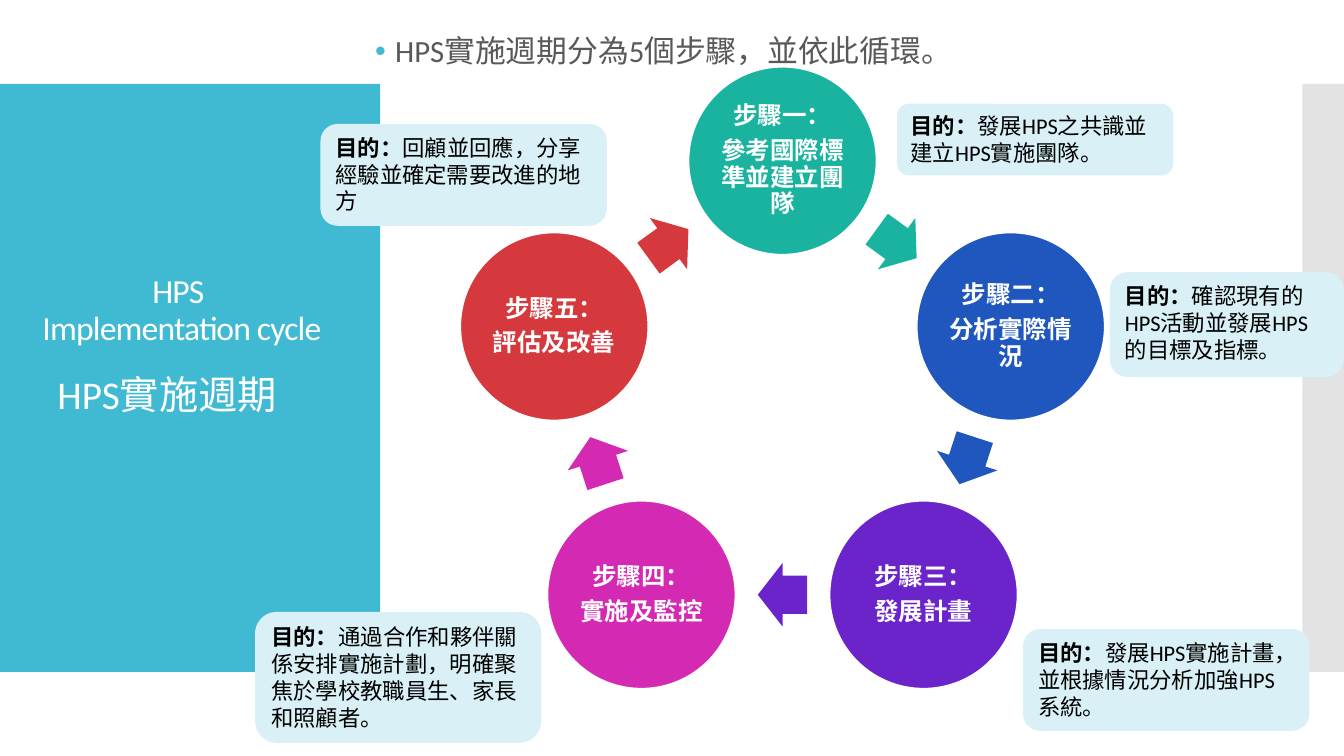
from math import cos, radians, sin

from lxml.etree import SubElement
from pptx import Presentation
from pptx.dml.color import RGBColor
from pptx.enum.shapes import MSO_SHAPE as Shape
from pptx.enum.text import MSO_ANCHOR as Anchor, MSO_AUTO_SIZE as AutoSize, PP_ALIGN as Align
from pptx.oxml.ns import qn
from pptx.util import Inches, Pt

# Content; places are left, top, width, height in percent of the slide
TITLE = ("HPS\v Implementation cycle", (1.2, 32.4, 24.15, 17.47))
CHINESE_TITLE = ("HPS實施週期", (3.53, 48.27, 19.43, 7.6))
INTRO = ("HPS實施週期分為5個步驟，並依此循環。", (27.15, 1.47, 43.2, 10.93))
SIDE_PANELS = [
    ("40BAD2", 100, (0, 11.11, 28.28, 77.78)),
    ("C8C8C8", 50, (96.9, 11.11, 3.1, 77.78)),
]
PURPOSE = "目的："
STEPS = [  # heading, task, colour, purpose, place of the purpose
    ("步驟一：", "參考國際標準並建立團隊", "1AB39F",
     "發展HPS之共識並建立HPS實施團隊。", (66.75, 13.73, 20.55, 9.47)),
    ("步驟二：", "分析實際情況", "1F57BF",
     "確認現有的HPS活動並發展HPS的目標及指標。", (82.58, 36, 17.4, 13.87)),
    ("步驟三：", "發展計畫", "6A24CA",
     "發展HPS實施計畫，並根據情況分析加強HPS系統。", (76.13, 83.2, 21.3, 13.47)),
    ("步驟四：", "實施及監控", "D429B3",
     "通過合作和夥伴關係安排實施計劃，明確聚焦於學校教職員生、家長和照顧者。",
     (18.98, 80.93, 21.3, 17.33)),
    ("步驟五：", "評估及改善", "D5393D",
     "回顧並回應，分享經驗並確定需要改進的地方", (23.85, 16.4, 21.3, 13.47)),
]
FONT, WHITE, TEAL, PALE = "Calibri", "FFFFFF", "40BAD2", "D9F1F6"

deck = Presentation()
deck.slide_width, deck.slide_height = Inches(13.33), Inches(7.5)
WIDTH, HEIGHT = deck.slide_width, deck.slide_height
slide = deck.slides.add_slide(deck.slide_layouts[1])

# Ring of steps
CENTRE_X, CENTRE_Y = 0.58 * WIDTH + Inches(0.03), 0.53 * HEIGHT
RING = Inches(2.38)
CIRCLE = Inches(1.86)
ARROW_W, ARROW_H = Inches(0.49), Inches(0.63)
TURN = 360 / len(STEPS)


def colour(hex_code):
    return RGBColor.from_string(hex_code)


def area(place):
    left, top, width, height = place
    return (int(left * WIDTH / 100), int(top * HEIGHT / 100),
            int(width * WIDTH / 100), int(height * HEIGHT / 100))


def on_ring(angle, radius, width, height):
    x = CENTRE_X + radius * sin(radians(angle))
    y = CENTRE_Y - radius * cos(radians(angle))
    return int(x - width / 2), int(y - height / 2), width, height


def add_filled(kind, box, fill):
    shape = slide.shapes.add_shape(kind, *box)
    shape.shadow.inherit = False
    shape.fill.solid()
    shape.fill.fore_color.rgb = colour(fill)
    shape.line.fill.background()
    return shape


def write(frame, paragraphs, size, color, bold=False, align=Align.LEFT,
          anchor=Anchor.TOP, margin=None, fit=AutoSize.NONE, wrap=True,
          leading=None, before=None, after=None):
    """Each paragraph is a list of texts or (text, bold) pairs."""
    frame.word_wrap, frame.auto_size, frame.vertical_anchor = wrap, fit, anchor
    if margin is not None:
        frame.margin_left = frame.margin_right = Inches(margin)
        frame.margin_top = frame.margin_bottom = Inches(margin)
    for i, pieces in enumerate(paragraphs):
        para = frame.add_paragraph() if i else frame.paragraphs[0]
        para.alignment, para.line_spacing = align, leading
        para.space_before, para.space_after = before, after
        for piece in pieces:
            text, heavy = piece if isinstance(piece, tuple) else (piece, bold)
            for j, line in enumerate(text.split("\v")):
                if j:
                    para.add_line_break()
                run = para.add_run()
                run.text = line
                run.font.name, run.font.size, run.font.bold = FONT, Pt(size), heavy
                run.font.color.rgb = colour(color)


# Side panels, behind everything else
for depth, (fill, opacity, place) in enumerate(SIDE_PANELS):
    panel = add_filled(Shape.RECTANGLE, area(place), fill)
    if opacity < 100:
        tint = panel.fill._xPr.find(".//" + qn("a:srgbClr"))
        SubElement(tint, qn("a:alpha"), val=str(opacity * 1000))
    slide.shapes._spTree.insert(2 + depth, panel._element)

# Titles
text, place = TITLE
title = slide.shapes.title
title.left, title.top, title.width, title.height = area(place)
write(title.text_frame, [[text]], 24, WHITE, align=Align.CENTER,
      anchor=Anchor.MIDDLE, leading=0.9)
for run in title.text_frame.paragraphs[0].runs:
    run.font._element.set("spc", "-60")

text, place = CHINESE_TITLE
chinese_title = slide.shapes.add_textbox(*area(place))
write(chinese_title.text_frame, [[text]], 28, WHITE, wrap=False,
      fit=AutoSize.SHAPE_TO_FIT_TEXT)

# Introduction with its bullet
text, place = INTRO
intro = slide.placeholders[1]
intro.left, intro.top, intro.width, intro.height = area(place)
write(intro.text_frame, [[text]], 22, "595959", anchor=Anchor.MIDDLE,
      leading=0.9, before=Pt(12))
bullet = intro.text_frame.paragraphs[0]._p.get_or_add_pPr()
bullet.set("marL", str(Inches(0.2)))
bullet.set("indent", str(-Inches(0.2)))
SubElement(SubElement(bullet, qn("a:buClr")), qn("a:srgbClr"), val=TEAL)
SubElement(bullet, qn("a:buFont"), typeface="Arial")
SubElement(bullet, qn("a:buChar"), char="•")

# Circles, each followed by the arrow to the next step
for i, (heading, task, fill, _, _) in enumerate(STEPS):
    circle = add_filled(Shape.OVAL, on_ring(i * TURN, RING, CIRCLE, CIRCLE), fill)
    circle.line.color.rgb = colour(WHITE)
    circle.line.width = Pt(0.85)
    write(circle.text_frame, [[heading], [task]], 17.5, WHITE, bold=True,
          align=Align.CENTER, anchor=Anchor.MIDDLE, margin=0.03,
          leading=0.9, after=Pt(6))

    halfway = (i + 0.5) * TURN
    arrow = add_filled(Shape.RIGHT_ARROW, on_ring(
        halfway, RING * cos(radians(TURN / 2)), ARROW_W, ARROW_H), fill)
    arrow.adjustments[0], arrow.adjustments[1] = 0.6, 0.5
    arrow.rotation = halfway

# Purpose of each step
for *_, purpose, place in STEPS:
    note = add_filled(Shape.ROUNDED_RECTANGLE, area(place), PALE)
    write(note.text_frame, [[(PURPOSE, True), purpose]], 16, "000000",
          fit=AutoSize.SHAPE_TO_FIT_TEXT)

deck.save("out.pptx")
